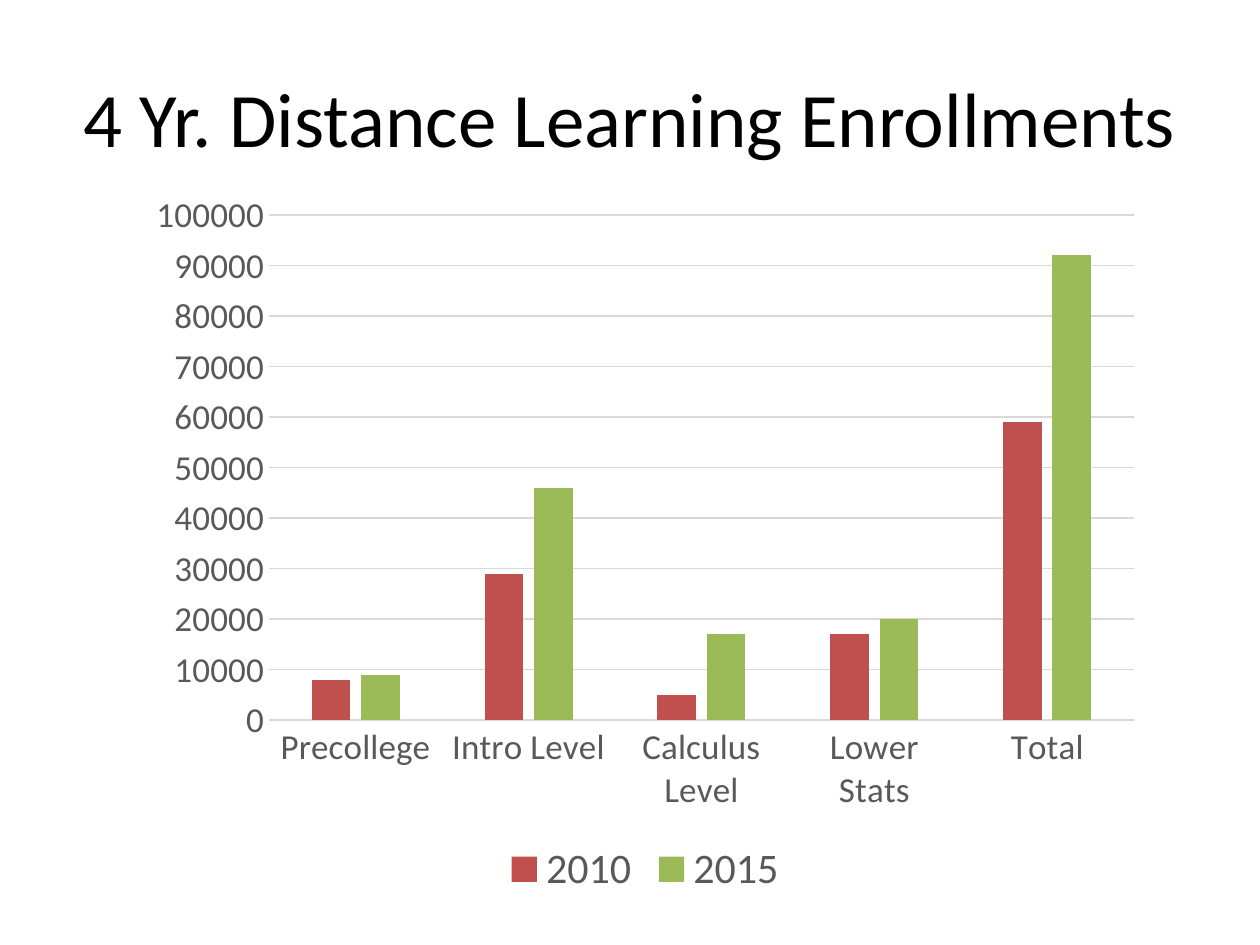
from pptx import Presentation
from pptx.chart.data import CategoryChartData
from pptx.dml.color import RGBColor
from pptx.enum.chart import XL_CHART_TYPE, XL_LEGEND_POSITION, XL_TICK_MARK
from pptx.enum.text import MSO_ANCHOR, PP_ALIGN
from pptx.util import Inches, Pt

TITLE = "4 Yr. Distance Learning Enrollments"
LEVELS = ["Precollege", "Intro Level", "Calculus Level", "Lower Stats", "Total"]
BLACK = RGBColor(0x00, 0x00, 0x00)
GRAY = RGBColor(0x59, 0x59, 0x59)
LIGHT_GRAY = RGBColor(0xD9, 0xD9, 0xD9)
RED = RGBColor(0xC0, 0x50, 0x4D)
GREEN = RGBColor(0x9B, 0xBB, 0x59)
ENROLLMENTS = [
    ("2010", [8000, 29000, 5000, 17000, 59000], RED),
    ("2015", [9000, 46000, 17000, 20000, 92000], GREEN),
]
FONT = "Calibri"


def set_font(font, size, color):
    font.name = FONT
    font.size = Pt(size)
    font.bold = False
    font.color.rgb = color


def set_line(line):
    line.color.rgb = LIGHT_GRAY
    line.width = Pt(0.75)


def add_title(slide):
    title = slide.shapes.title
    title.left, title.top = Inches(0.5), Inches(0.3)
    title.width, title.height = Inches(9), Inches(1.25)
    tf = title.text_frame
    tf.text = TITLE
    tf.vertical_anchor = MSO_ANCHOR.MIDDLE
    p = tf.paragraphs[0]
    p.alignment = PP_ALIGN.CENTER
    set_font(p.font, 44, BLACK)


def add_enrollment_chart(slide):
    data = CategoryChartData(number_format="0")
    data.categories = LEVELS
    for year, values, _ in ENROLLMENTS:
        data.add_series(year, values)
    chart = slide.shapes.add_chart(
        XL_CHART_TYPE.COLUMN_CLUSTERED,
        Inches(1.08), Inches(1.42), Inches(8.08), Inches(5.75), data,
    ).chart
    set_font(chart.font, 10, BLACK)
    chart.has_title = False

    plot = chart.plots[0]
    plot.gap_width, plot.overlap = 219, -27
    plot.vary_by_categories = False
    for series, (_, _, color) in zip(plot.series, ENROLLMENTS):
        series.format.fill.solid()
        series.format.fill.fore_color.rgb = color

    for axis in (chart.category_axis, chart.value_axis):
        axis.major_tick_mark = axis.minor_tick_mark = XL_TICK_MARK.NONE
        set_font(axis.tick_labels.font, 20, GRAY)
    set_line(chart.category_axis.format.line)

    value_axis = chart.value_axis
    value_axis.minimum_scale, value_axis.maximum_scale = 0, 100000
    value_axis.major_unit = 10000
    value_axis.tick_labels.number_format = "0"
    value_axis.tick_labels.number_format_is_linked = False
    value_axis.format.line.fill.background()
    set_line(value_axis.major_gridlines.format.line)

    chart.has_legend = True
    chart.legend.position = XL_LEGEND_POSITION.BOTTOM
    chart.legend.include_in_layout = False
    set_font(chart.legend.font, 24, GRAY)


def main():
    prs = Presentation()
    prs.slide_width, prs.slide_height = Inches(10), Inches(7.5)
    slide = prs.slides.add_slide(prs.slide_layouts.get_by_name("Title Only"))
    add_title(slide)
    add_enrollment_chart(slide)
    prs.save("out.pptx")


if __name__ == "__main__":
    main()
